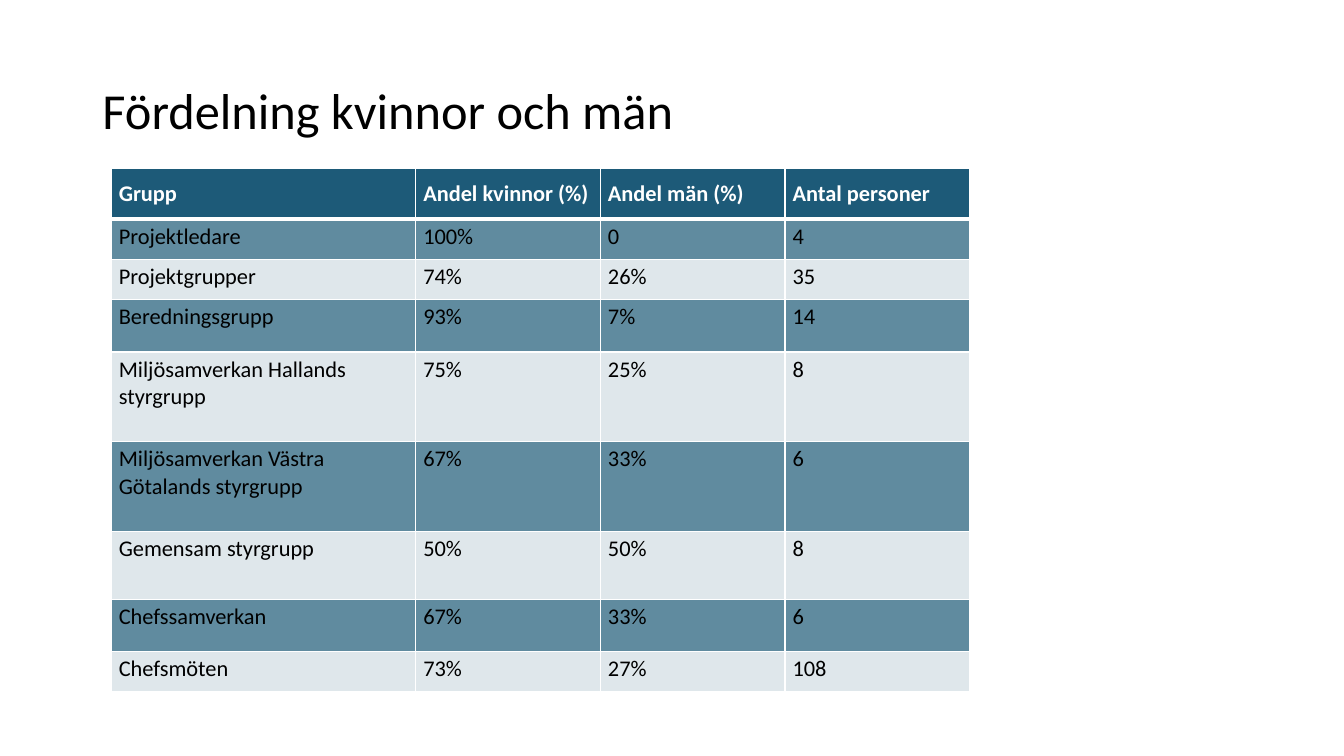
from lxml import etree
from pptx import Presentation
from pptx.dml.color import RGBColor
from pptx.enum.text import MSO_ANCHOR, PP_ALIGN
from pptx.oxml.ns import qn
from pptx.util import Pt

MIDDLE, TOP = MSO_ANCHOR.MIDDLE, MSO_ANCHOR.TOP
LEFT = PP_ALIGN.LEFT
TITLE_ONLY = 5
WHITE, BLACK = "FFFFFF", "000000"
HEADER_FILL, DARK_BAND, LIGHT_BAND = "1D5A78", "608B9F", "DFE7EB"

COLUMN_WIDTHS = [217.5, 131.9, 131.9, 131.9]
ROW_HEIGHTS = [36, 28.8, 28.8, 37.4, 64.1, 64.1, 48.4, 37.4, 28.8]
GROUPS = [
    ("Grupp", "Andel kvinnor (%)", "Andel män (%)", "Antal personer"),
    ("Projektledare", "100%", "0", "4"),
    ("Projektgrupper", "74%", "26%", "35"),
    ("Beredningsgrupp", "93%", "7%", "14"),
    ("Miljösamverkan Hallands styrgrupp", "75%", "25%", "8"),
    ("Miljösamverkan Västra Götalands styrgrupp", "67%", "33%", "6"),
    ("Gemensam styrgrupp", "50%", "50%", "8"),
    ("Chefssamverkan", "67%", "33%", "6"),
    ("Chefsmöten", "73%", "27%", "108"),
]


def color(value):
    return RGBColor.from_string(value)


def write_text(frame, text, size=16, fill=BLACK, bold=False, line_spacing=1.0):
    paragraph = frame.paragraphs[0]
    paragraph.alignment = LEFT
    paragraph.line_spacing = line_spacing
    run = paragraph.add_run()
    run.text = text
    run.font.name = "Calibri"
    run.font.size = Pt(size)
    run.font.bold = bold
    run.font.color.rgb = color(fill)


def set_borders(cell, bottom):
    properties = cell._tc.get_or_add_tcPr()
    for side, width in (("L", 1), ("R", 1), ("T", 1), ("B", bottom)):
        line = etree.SubElement(properties, qn(f"a:ln{side}"), w=str(Pt(width)))
        line_fill = etree.SubElement(line, qn("a:solidFill"))
        etree.SubElement(line_fill, qn("a:srgbClr"), val=WHITE)


def format_cell(cell, text, fill, header):
    set_borders(cell, 3 if header else 1)
    cell.fill.solid()
    cell.fill.fore_color.rgb = color(fill)
    cell.margin_left = cell.margin_right = Pt(5.4)
    cell.margin_top = cell.margin_bottom = Pt(2.7)
    cell.vertical_anchor = MIDDLE if header else TOP
    write_text(cell.text_frame, text, fill=WHITE if header else BLACK, bold=header)


def add_heading(slide, text):
    heading = slide.shapes.title
    heading.left, heading.top = Pt(66), Pt(28.75)
    heading.width, heading.height = Pt(828), Pt(104.4)
    heading.text_frame.vertical_anchor = MIDDLE
    heading.text_frame.word_wrap = True
    write_text(heading.text_frame, text, size=36, line_spacing=0.9)


def add_group_table(slide):
    table = slide.shapes.add_table(
        len(GROUPS), len(COLUMN_WIDTHS), Pt(79.5), Pt(120.5),
        Pt(sum(COLUMN_WIDTHS)), Pt(sum(ROW_HEIGHTS))).table
    for column, width in zip(table.columns, COLUMN_WIDTHS):
        column.width = Pt(width)
    for index, (row, height, values) in enumerate(zip(table.rows, ROW_HEIGHTS, GROUPS)):
        row.height = Pt(height)
        header = index == 0
        band = DARK_BAND if index % 2 else LIGHT_BAND
        for cell, value in zip(row.cells, values):
            format_cell(cell, value, HEADER_FILL if header else band, header)


def main():
    presentation = Presentation()
    presentation.slide_width, presentation.slide_height = Pt(960), Pt(540)
    slide = presentation.slides.add_slide(presentation.slide_layouts[TITLE_ONLY])
    add_heading(slide, "Fördelning kvinnor och män")
    add_group_table(slide)
    presentation.save("out.pptx")


if __name__ == "__main__":
    main()
